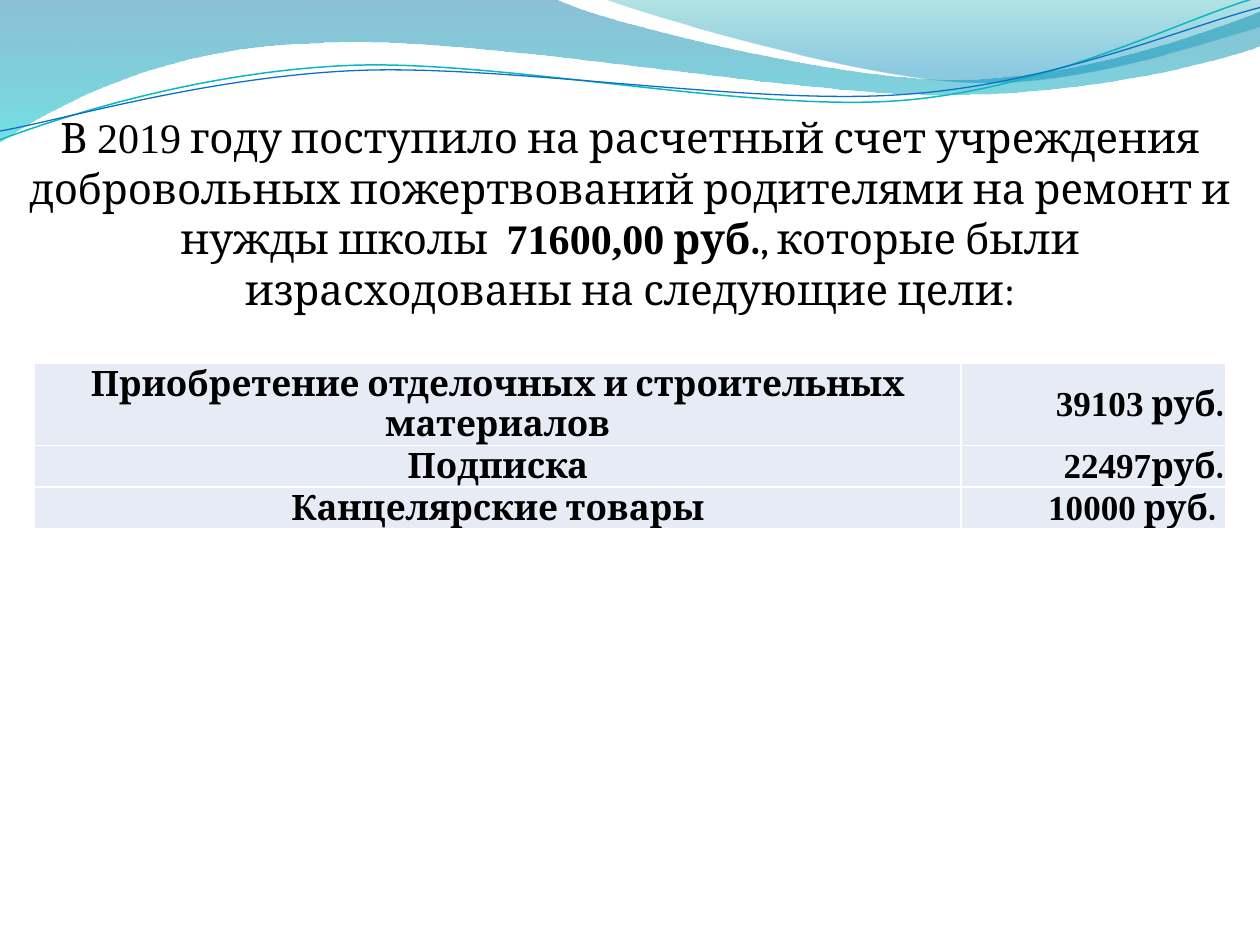
from lxml import etree
from pptx import Presentation
from pptx.dml.color import RGBColor
from pptx.enum.text import MSO_ANCHOR, MSO_AUTO_SIZE, PP_ALIGN
from pptx.oxml.ns import qn
from pptx.util import Cm, Pt

MID, RIGHT = PP_ALIGN.CENTER, PP_ALIGN.RIGHT
TOP, CENTRE = MSO_ANCHOR.TOP, MSO_ANCHOR.MIDDLE
GROW = MSO_AUTO_SIZE.SHAPE_TO_FIT_TEXT
SERIF, ROMAN = "Cambria", "Times New Roman"
INCH = 2.54

BANDS = [
    ([(0, 0), (4.4, -0.01),
      (4.76, 0.17, 6.64, 0.63, 7.58, 0.63), (8.53, 0.63, 9.58, 0.26, 10, 0.09),
      (10.01, 0.36),
      (9.83, 0.44, 8.7, 0.76, 7.46, 0.75), (6.22, 0.75, 3.82, 0.28, 2.57, 0.34),
      (1.29, 0.36, 0.46, 0.83, -0.01, 1.13), (0, 0)],
     [(0, "0074A1", 45), (1, "00C6CF", 55)]),
    ([(4.79, -0.01),
      (5.09, 0.11, 6.82, 0.62, 7.69, 0.65), (8.56, 0.69, 9.61, 0.32, 10, 0.21),
      (10, 0), (4.79, -0.01)],
     [(0, "00A1A9", 30), (0.8, "008BBF", 45)]),
]
WAVES = [
    ([(0, 1.11),
      (0.48, 0.93, 1.58, 0.57, 2.77, 0.52), (3.95, 0.47, 5.93, 0.89, 7.13, 0.8),
      (8.33, 0.71, 9.38, 0.15, 9.98, -0.02)], "0AB8BF", 0.85),
    ([(0, 1.04),
      (0.47, 0.96, 1.64, 0.61, 2.83, 0.56), (4.03, 0.51, 5.97, 0.84, 7.17, 0.75),
      (8.36, 0.67, 9.41, 0.21, 10, 0.06)], "0F6FC6", 0.75),
]
TITLE = [
    ("В ", SERIF, False),
    ("2019", ROMAN, False),
    (" году поступило на расчетный счет учреждения добровольных "
     "пожертвований родителями на ремонт и нужды школы  ", SERIF, False),
    ("71600,00", ROMAN, True),
    (" руб.", SERIF, True),
    (", которые были израсходованы на следующие цели:", SERIF, False),
]
COSTS = [
    ("Приобретение отделочных и строительных материалов", "39103", " руб."),
    ("Подписка", "22497", "руб."),
    ("Канцелярские товары", "10000", " руб. "),
]
WIDTHS = [18.67, 5.33]
HEIGHTS = [1.65, 0.83, 0.83]


def paint(code):
    return RGBColor.from_string(code)


def bend(shape, parts):
    lines = iter(list(shape.element.iter(qn("a:lnTo"))))
    for part in parts:
        line = next(lines)
        if len(part) == 6:
            line.tag = qn("a:cubicBezTo")
            for _ in range(2):
                extra = next(lines)
                line.append(extra[0])
                extra.getparent().remove(extra)


def draw(slide, route, close):
    points = [(Cm(part[i] * INCH), Cm(part[i + 1] * INCH))
              for part in route for i in range(0, len(part), 2)]
    maker = slide.shapes.build_freeform(*points[0])
    maker.add_line_segments(points[1:], close=close)
    shape = maker.convert_to_shape()
    bend(shape, route[1:])
    shape.shadow.inherit = False
    return shape


def add_band(slide, route, stops):
    shape = draw(slide, route, True)
    shape.line.fill.background()
    shape.fill.gradient()
    shape.fill.gradient_angle = 270
    for stop, (place, code, _) in zip(shape.fill.gradient_stops, stops):
        stop.position = place
        stop.color.rgb = paint(code)
    tints = shape.element.spPr.iter(qn("a:srgbClr"))
    for tint, (_, _, alpha) in zip(tints, stops):
        etree.SubElement(tint, qn("a:alpha"), val=str(alpha * 1000))


def add_wave(slide, route, code, width):
    shape = draw(slide, route, False)
    shape.fill.background()
    shape.line.color.rgb = paint(code)
    shape.line.width = Pt(width)


def write(frame, runs, size, align):
    line = frame.paragraphs[0]
    line.alignment = align
    line.font.size = Pt(size)
    line.font.color.rgb = paint("000000")
    for text, face, bold in runs:
        run = line.add_run()
        run.text = text
        run.font.name = face
        run.font.bold = bold


def add_title(slide):
    title = slide.shapes.title
    title.left, title.top = Cm(0), Cm(2.13)
    title.width, title.height = Cm(25.4), Cm(4.37)
    frame = title.text_frame
    frame.word_wrap = True
    frame.auto_size = GROW
    frame.vertical_anchor = TOP
    write(frame, TITLE, 24, MID)
    title.element.getparent().append(title.element)


def edge(cell):
    props = cell._tc.get_or_add_tcPr()
    for side in ("lnL", "lnR", "lnT", "lnB"):
        line = etree.SubElement(props, qn("a:" + side), w=str(Pt(1)))
        fill = etree.SubElement(line, qn("a:solidFill"))
        etree.SubElement(fill, qn("a:srgbClr"), val="FFFFFF")


def fill_cell(cell, runs, align, anchor):
    edge(cell)
    cell.fill.solid()
    cell.fill.fore_color.rgb = paint("E7EBF5")
    cell.margin_left = cell.margin_right = cell.margin_top = Cm(0.03)
    cell.margin_bottom = Cm(0)
    cell.vertical_anchor = anchor
    write(cell.text_frame, runs, 20, align)


def add_costs(slide):
    table = slide.shapes.add_table(
        len(COSTS), len(WIDTHS), Cm(0.7), Cm(7.32),
        Cm(sum(WIDTHS)), Cm(sum(HEIGHTS))).table
    table.first_row = table.horz_banding = False
    for column, width in zip(table.columns, WIDTHS):
        column.width = Cm(width)
    for row, height, (name, cost, unit) in zip(table.rows, HEIGHTS, COSTS):
        row.height = Cm(height)
        fill_cell(row.cells[0], [(name, SERIF, True)], MID, TOP)
        fill_cell(row.cells[1], [(cost, ROMAN, True), (unit, SERIF, True)],
                  RIGHT, CENTRE)


def main():
    deck = Presentation()
    deck.slide_width, deck.slide_height = Cm(25.4), Cm(19.05)
    slide = deck.slides.add_slide(deck.slide_layouts[5])
    for route, stops in BANDS:
        add_band(slide, route, stops)
    for route, code, width in WAVES:
        add_wave(slide, route, code, width)
    add_costs(slide)
    add_title(slide)
    deck.save("out.pptx")


if __name__ == "__main__":
    main()
